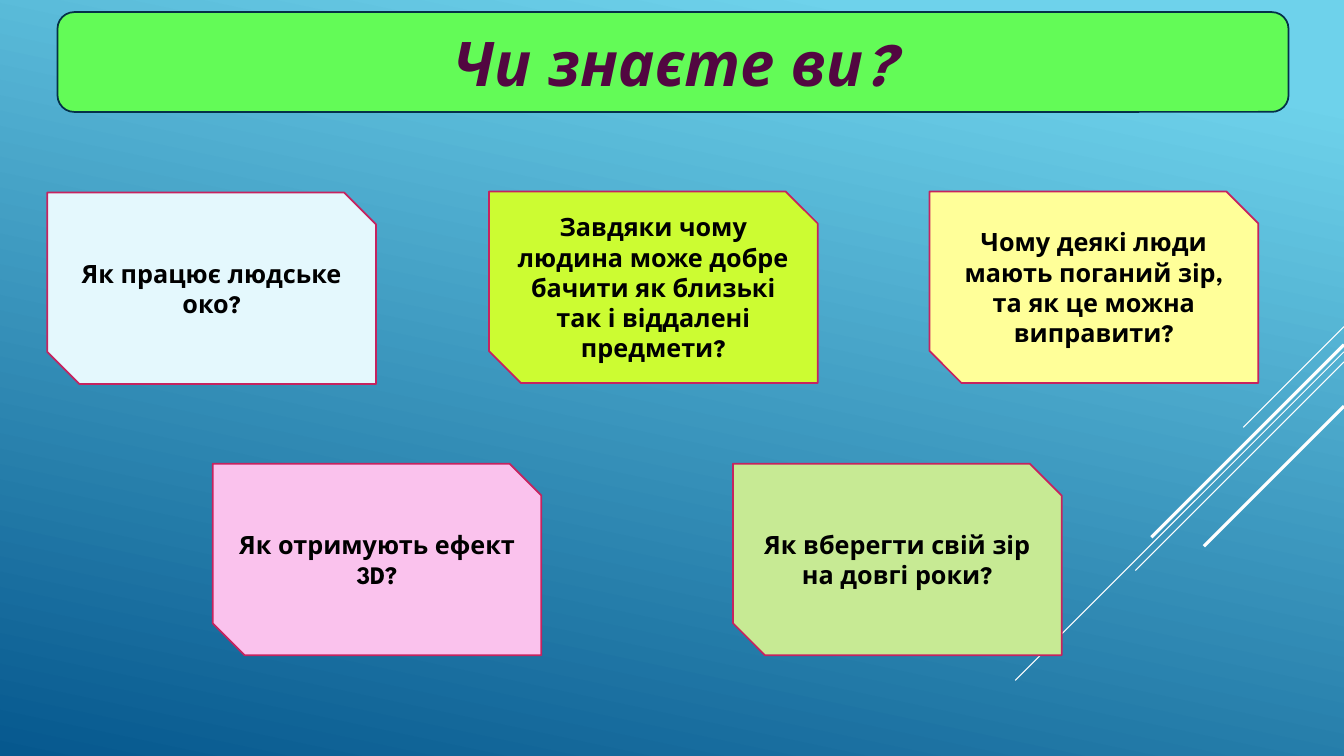
from pptx import Presentation
from pptx.dml.color import RGBColor
from pptx.enum.shapes import MSO_CONNECTOR, MSO_SHAPE
from pptx.enum.text import MSO_ANCHOR, PP_ALIGN
from pptx.oxml.ns import qn
from pptx.util import Inches, Pt
from lxml.etree import SubElement

FONT = "League Spartan"
COLORS = {
    "sky": "6ED2EB", "deep": "06588E", "ray": "FFFFFF",
    "banner": "63FB57", "banner_edge": "043148", "title": "520741",
    "card_edge": "C6235F", "card_text": "000000",
    "ice": "E4F8FD", "pink": "FAC2ED", "yellow": "FFFF99",
    "lime": "CCFC32", "green": "C7EA94",
}
CARD_WIDTH, CARD_HEIGHT = 3.26, 1.9
SLIDE_WIDTH = 13.33

# Start height at the right edge, 45-degree run, line width
RAYS = [
    (3.24, 1.0, 0.75),
    (3.49, 3.26, 0.75),
    (3.59, 2.07, 0.75),
    (3.42, 1.91, 2.25),
    (4.03, 1.39, 2.25),
]
# Left, top, fill, question
CARDS = [
    (0.47, 1.91, "ice", "Як працює людське око?"),
    (4.85, 1.9, "lime", "Завдяки чому людина може добре бачити як близькі "
                        "так і віддалені предмети?"),
    (9.22, 1.9, "yellow", "Чому деякі люди мають поганий зір, "
                          "та як це можна виправити?"),
    (2.11, 4.6, "pink", "Як отримують ефект 3D?"),
    (7.27, 4.6, "green", "Як вберегти свій зір на довгі роки?"),
]


def rgb(name):
    return RGBColor.from_string(COLORS[name])


def paint_background(page):
    fill = page.background.fill
    fill.gradient()
    fill.gradient_angle = 360 - 102  # measured counter-clockwise
    for stop, name, position in zip(fill.gradient_stops, ("sky", "deep"), (0.1, 1)):
        stop.color.rgb = rgb(name)
        stop.position = position


def add_ray(page, top, run, width):
    """Draw a diagonal from the right edge down to the left."""
    ray = page.shapes.add_connector(
        MSO_CONNECTOR.STRAIGHT, Inches(SLIDE_WIDTH), Inches(top),
        Inches(SLIDE_WIDTH - run), Inches(top + run))
    ray.line.color.rgb = rgb("ray")
    ray.line.width = Pt(width)
    SubElement(ray._element.spPr, qn("a:effectLst"))


def write_text(shape, text, *, size, color, italic=False):
    frame = shape.text_frame
    frame.word_wrap = True
    frame.vertical_anchor = MSO_ANCHOR.MIDDLE
    para = frame.paragraphs[0]
    para.alignment = PP_ALIGN.CENTER
    span = para.add_run()
    span.text = text
    span.font.name = FONT
    span.font.size = Pt(size)
    span.font.bold = True
    span.font.italic = italic
    span.font.color.rgb = rgb(color)


def add_panel(page, kind, left, top, width, height, fill, edge):
    panel = page.shapes.add_shape(
        kind, Inches(left), Inches(top), Inches(width), Inches(height))
    panel.shadow.inherit = False
    panel.fill.solid()
    panel.fill.fore_color.rgb = rgb(fill)
    panel.line.color.rgb = rgb(edge)
    panel.line.width = Pt(1.25)
    return panel


def main():
    deck = Presentation()
    deck.slide_width, deck.slide_height = Inches(SLIDE_WIDTH), Inches(7.5)
    page = deck.slides.add_slide(deck.slide_layouts[6])
    paint_background(page)
    for top, run, width in RAYS:
        add_ray(page, top, run, width)
    for left, top, fill, question in CARDS:
        card = add_panel(page, MSO_SHAPE.SNIP_2_DIAG_RECTANGLE, left, top,
                         CARD_WIDTH, CARD_HEIGHT, fill, "card_edge")
        write_text(card, question, size=18, color="card_text")
    banner = add_panel(page, MSO_SHAPE.ROUNDED_RECTANGLE, 0.57, 0.12,
                       12.21, 0.99, "banner", "banner_edge")
    write_text(banner, "Чи знаєте ви?", size=44, color="title", italic=True)
    deck.save("out.pptx")


if __name__ == "__main__":
    main()
